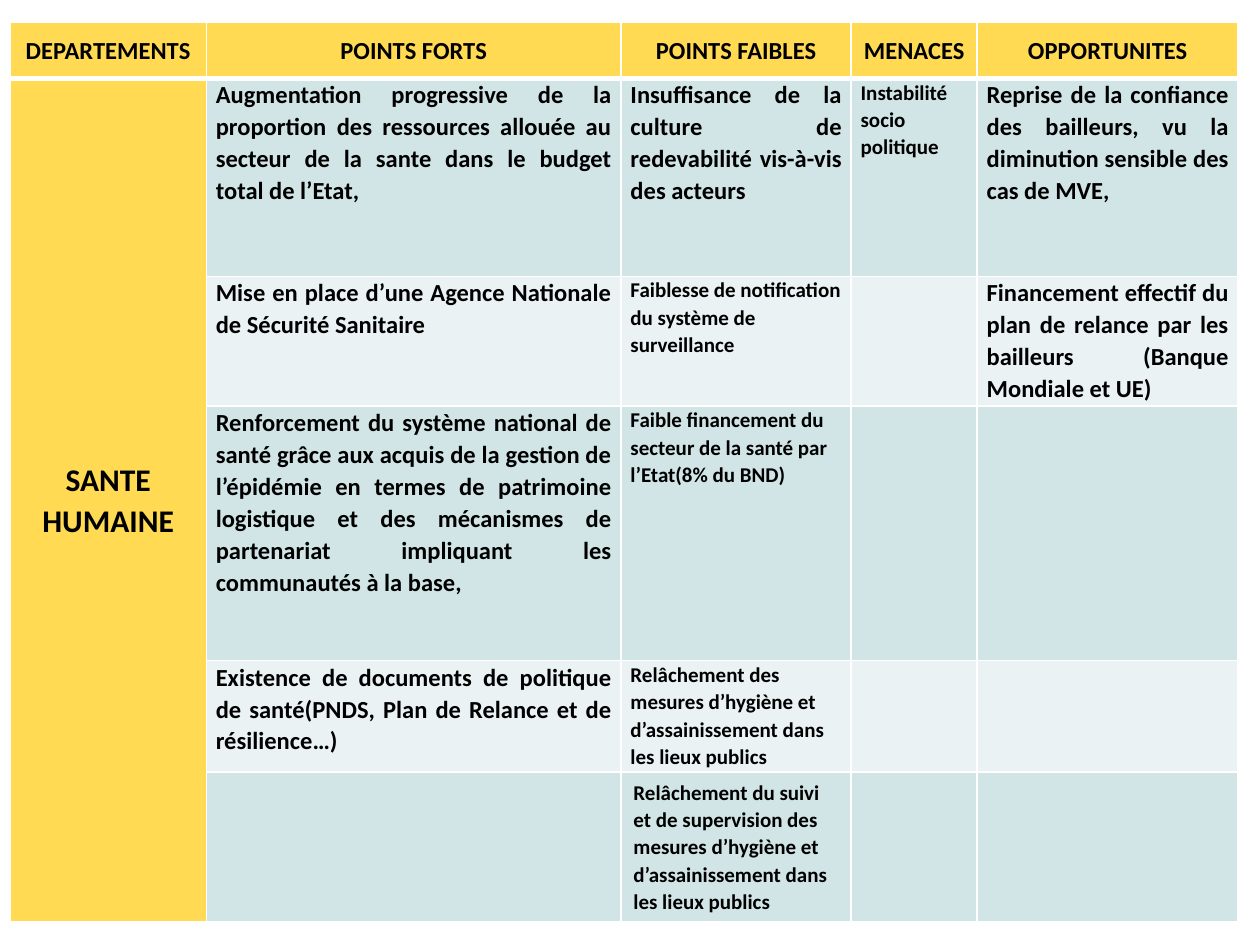
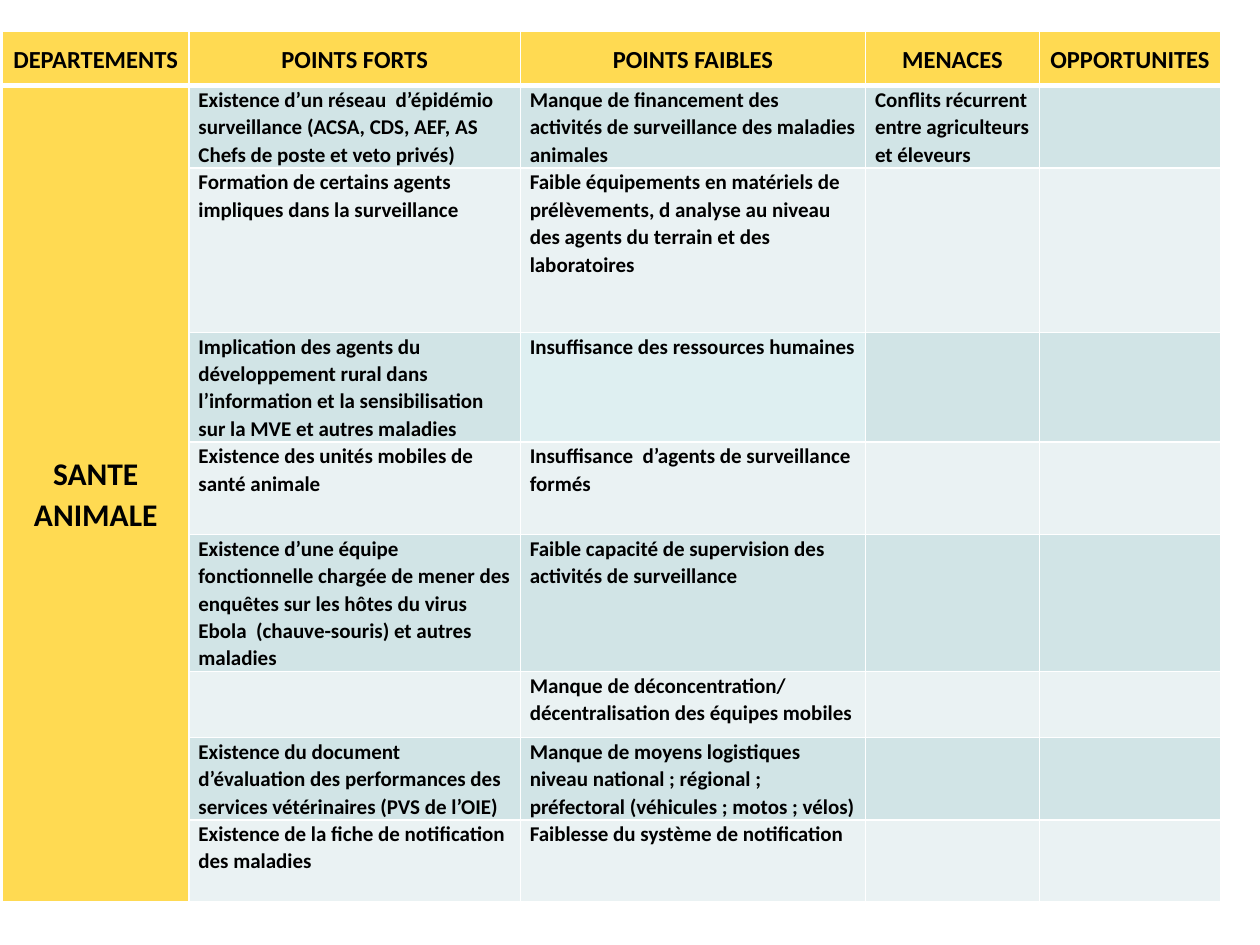
from lxml import etree
from pptx import Presentation
from pptx.dml.color import RGBColor
from pptx.enum.text import MSO_ANCHOR, PP_ALIGN
from pptx.oxml.ns import qn
from pptx.util import Cm, Pt

MIDDLE, TOP = MSO_ANCHOR.MIDDLE, MSO_ANCHOR.TOP
CENTER, LEFT, JUSTIFY = PP_ALIGN.CENTER, PP_ALIGN.LEFT, PP_ALIGN.JUSTIFY

COLORS = {
    "gold": "FFDA52",
    "dark": "D1E4E6",
    "light": "EAF2F3",
    "pale": "DEEFF1",
    "ink": "000000",
    "rule": "FFFFFF",
}
FONT = "Calibri"
HEADS = ["DEPARTEMENTS", "POINTS FORTS", "POINTS FAIBLES", "MENACES", "OPPORTUNITES"]

HUMAN = {
    "title": "SANTE HUMAINE",
    "box": (0.2, 0.44),
    "cols": [3.96, 8.36, 4.64, 2.54, 5.26],
    "rows": [1.14, 3.99, 2.62, 5.13, 2.24, 3],
    "body": [
        ["Augmentation progressive de la proportion des ressources allouée au secteur "
         "de la sante dans le budget total de l’Etat,",
         "Insuffisance de la culture de redevabilité vis-à-vis des acteurs",
         "Instabilité socio politique",
         "Reprise de la confiance des bailleurs, vu la diminution sensible des cas de MVE,"],
        ["Mise en place d’une Agence Nationale de Sécurité Sanitaire",
         "Faiblesse de notification du système de surveillance",
         "",
         "Financement effectif du plan de relance par les bailleurs (Banque Mondiale et UE)"],
        ["Renforcement du système national de santé grâce aux acquis de la gestion de "
         "l’épidémie en termes de patrimoine logistique et des mécanismes de partenariat "
         "impliquant les communautés à la base,",
         "Faible financement du secteur de la santé par l’Etat(8% du BND)"],
        ["Existence de documents de politique de santé(PNDS, Plan de Relance et de résilience…)",
         "Relâchement des mesures d’hygiène et d’assainissement dans les lieux publics"],
        ["",
         "Relâchement du suivi et de supervision des mesures d’hygiène et "
         "d’assainissement dans les lieux publics"],
    ],
    "large": {(1, 1), (2, 1), (3, 1), (4, 1), (1, 2), (1, 4), (2, 4)},
    "padded": {(5, 2)},
    "pale": set(),
}

ANIMAL = {
    "title": "SANTE ANIMALE",
    "box": (0.05, 0.64),
    "cols": [3.76, 6.68, 6.96, 3.5, 3.66],
    "rows": [1.09, 1.66, 3.31, 2.2, 1.87, 2.76, 1.33, 1.65, 1.65],
    "body": [
        ["Existence d’un réseau  d’épidémio surveillance (ACSA, CDS, AEF, AS Chefs de "
         "poste et veto privés)",
         "Manque de financement des activités de surveillance des maladies animales",
         "Conflits récurrent entre agriculteurs et éleveurs"],
        ["Formation de certains agents impliques dans la surveillance",
         "Faible équipements en matériels de prélèvements, d analyse au niveau des agents "
         "du terrain et des laboratoires"],
        ["Implication des agents du développement rural dans l’information et la "
         "sensibilisation sur la MVE et autres maladies",
         "Insuffisance des ressources humaines"],
        ["Existence des unités mobiles de santé animale",
         "Insuffisance  d’agents de surveillance formés"],
        ["Existence d’une équipe fonctionnelle chargée de mener des enquêtes sur les hôtes "
         "du virus Ebola  (chauve-souris) et autres maladies",
         "Faible capacité de supervision des activités de surveillance"],
        ["", "Manque de déconcentration/ décentralisation des équipes mobiles"],
        ["Existence du document d’évaluation des performances des services vétérinaires "
         "(PVS de l’OIE)",
         "Manque de moyens logistiques niveau national ; régional ; préfectoral "
         "(véhicules ; motos ; vélos)"],
        ["Existence de la fiche de notification des maladies",
         "Faiblesse du système de notification"],
    ],
    "large": set(),
    "padded": set(),
    "pale": {(3, 2)},
}


def add_rules(cell, base):
    props = cell._tc.get_or_add_tcPr()
    widths = [("lnL", 1), ("lnR", 1), ("lnT", 1), ("lnB", base)]
    for spot, (tag, width) in enumerate(widths):
        line = etree.Element(qn(f"a:{tag}"), w=str(Pt(width)))
        fill = etree.SubElement(line, qn("a:solidFill"))
        etree.SubElement(fill, qn("a:srgbClr"), val=COLORS["rule"])
        props.insert(spot, line)


def style_cell(cell, color, base=1, padded=False):
    cell.fill.solid()
    cell.fill.fore_color.rgb = RGBColor.from_string(COLORS[color])
    side, edge = (0.25, 0.13) if padded else (0.19, 0)
    cell.margin_left = cell.margin_right = Cm(side)
    cell.margin_top = cell.margin_bottom = Cm(edge)
    add_rules(cell, base)


def write(cell, text, size, align, anchor):
    cell.text_frame.text = text
    cell.vertical_anchor = anchor
    para = cell.text_frame.paragraphs[0]
    para.alignment = align
    para.line_spacing = 1.07
    font = para.font
    for run in para.runs:
        font = run.font
    font.name, font.size, font.bold = FONT, Pt(size), True
    font.color.rgb = RGBColor.from_string(COLORS["ink"])


def add_head(table):
    for col, text in enumerate(HEADS):
        cell = table.cell(0, col)
        style_cell(cell, "gold", base=3)
        write(cell, text, 14, CENTER, MIDDLE)


def add_side(table, title):
    last = len(table.rows) - 1
    for row in range(1, last + 1):
        style_cell(table.cell(row, 0), "gold")
    table.cell(1, 0).merge(table.cell(last, 0))
    write(table.cell(1, 0), title, 18, CENTER, MIDDLE)


def add_body(table, data):
    for row, texts in enumerate(data["body"], 1):
        band = "dark" if row % 2 else "light"
        for col in range(1, len(HEADS)):
            spot = (row, col)
            cell = table.cell(row, col)
            color = "pale" if spot in data["pale"] else band
            style_cell(cell, color, padded=spot in data["padded"])
            text = texts[col - 1] if col <= len(texts) else ""
            size, align = (14, JUSTIFY) if spot in data["large"] else (12, LEFT)
            write(cell, text, size, align, TOP)


def add_matrix(deck, data):
    slide = deck.slides.add_slide(deck.slide_layouts[6])
    cols, rows = data["cols"], data["rows"]
    left, top = data["box"]
    frame = slide.shapes.add_table(
        len(rows), len(cols), Cm(left), Cm(top), Cm(sum(cols)), Cm(sum(rows)))
    table = frame.table
    table.horz_banding = False
    for col, width in zip(table.columns, cols):
        col.width = Cm(width)
    for row, height in zip(table.rows, rows):
        row.height = Cm(height)
    add_head(table)
    add_side(table, data["title"])
    add_body(table, data)


def main():
    deck = Presentation()
    deck.slide_width, deck.slide_height = Cm(25.4), Cm(19.05)
    for data in (HUMAN, ANIMAL):
        add_matrix(deck, data)
    deck.save("out.pptx")


if __name__ == "__main__":
    main()
